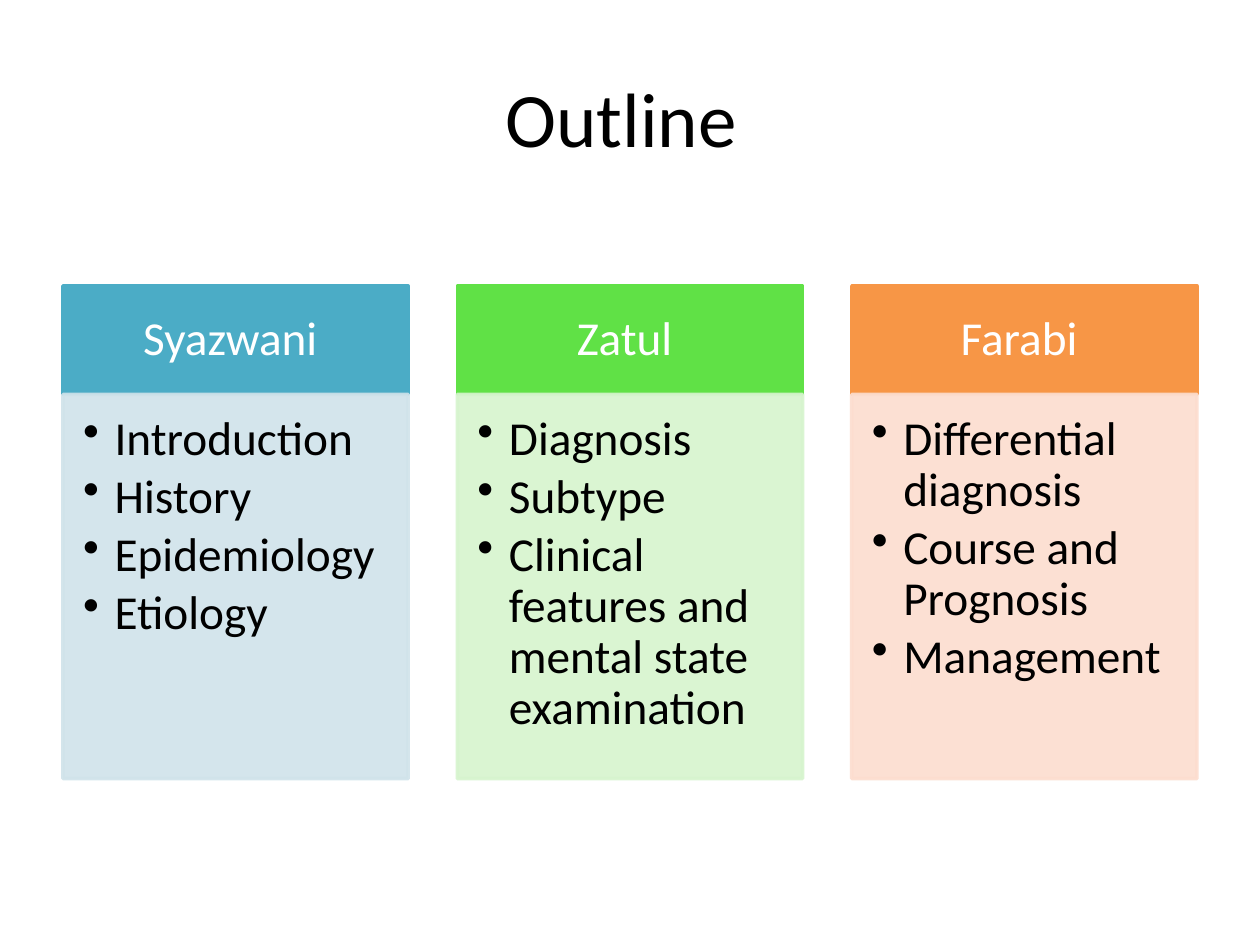
from dataclasses import dataclass

from lxml import etree
from pptx import Presentation
from pptx.dml.color import RGBColor
from pptx.enum.shapes import MSO_SHAPE
from pptx.enum.text import MSO_ANCHOR, PP_ALIGN
from pptx.oxml.ns import qn
from pptx.util import Inches, Pt

RECTANGLE = MSO_SHAPE.RECTANGLE
TOP, MIDDLE = MSO_ANCHOR.TOP, MSO_ANCHOR.MIDDLE
LEFT, CENTER = PP_ALIGN.LEFT, PP_ALIGN.CENTER


@dataclass(frozen=True)
class Theme:
    """Colours, font and sizes of the slide."""
    font: str = "Calibri"
    dark: str = "000000"
    light: str = "FFFFFF"
    title_size: int = 44
    body_size: int = 27
    line_width: int = 2
    panel_opacity: int = 90


THEME = Theme()

SPEAKERS = [
    ("Syazwani ", "4BACC6", "D0E3EA",
     ["Introduction", "History", "Epidemiology", "Etiology"]),
    ("Zatul ", "60E146", "D6F4CE",
     ["Diagnosis", "Subtype", "Clinical features and mental state examination"]),
    ("Farabi ", "F79646", "FCDDCF",
     ["Differential diagnosis", "Course and Prognosis", "Management"]),
]


def set_frame(shape, anchor, insets):
    """Set wrapping, anchor and insets (left, top, right, bottom) and return the frame."""
    frame = shape.text_frame
    frame.word_wrap = True
    frame.vertical_anchor = anchor
    frame.margin_left, frame.margin_top, frame.margin_right, frame.margin_bottom = map(Inches, insets)
    return frame


def add_run(paragraph, text, size, color):
    """Add one styled run to a paragraph."""
    run = paragraph.add_run()
    run.text = text
    run.font.name = THEME.font
    run.font.size = Pt(size)
    run.font.color.rgb = RGBColor.from_string(color)


def set_bullet(paragraph, indent):
    """Give a paragraph a round bullet with a hanging indent."""
    properties = paragraph._p.get_or_add_pPr()
    properties.set("marL", str(Inches(indent)))
    properties.set("indent", str(-Inches(indent)))
    etree.SubElement(properties, qn("a:buChar")).set("char", "•")


def add_box(slide, box, color, opacity=100):
    """Add a rectangle whose fill and line share one colour and opacity."""
    shape = slide.shapes.add_shape(RECTANGLE, *map(Inches, box))
    shape.shadow.inherit = False
    shape.line.width = Pt(THEME.line_width)
    for fill in (shape.fill, shape.line.fill):
        fill.solid()
        fill.fore_color.rgb = RGBColor.from_string(color)
    if opacity < 100:
        for element in shape._element.spPr.iter(qn("a:srgbClr")):
            etree.SubElement(element, qn("a:alpha")).set("val", str(opacity * 1000))
    return shape


def add_title(slide, box, text):
    """Add the centred slide title."""
    frame = set_frame(slide.shapes.add_textbox(*map(Inches, box)), MIDDLE, (0.1, 0.05, 0.1, 0.05))
    paragraph = frame.paragraphs[0]
    paragraph.alignment = CENTER
    add_run(paragraph, text, THEME.title_size, THEME.dark)


def add_header(slide, box, name, color):
    """Add the coloured header with a speaker's name."""
    frame = set_frame(add_box(slide, box, color), MIDDLE, (0.21, 0.12, 0.21, 0.12))
    paragraph = frame.paragraphs[0]
    paragraph.alignment = CENTER
    paragraph.line_spacing = 0.9
    add_run(paragraph, name, THEME.body_size, THEME.light)


def add_topics(slide, box, topics, color):
    """Add the pale panel with a bulleted list of topics."""
    panel = add_box(slide, box, color, THEME.panel_opacity)
    frame = set_frame(panel, TOP, (0.16, 0.16, 0.21, 0.24))
    for index, topic in enumerate(topics):
        paragraph = frame.add_paragraph() if index else frame.paragraphs[0]
        set_bullet(paragraph, 0.25)
        paragraph.level = 1
        paragraph.alignment = LEFT
        paragraph.line_spacing = 0.9
        paragraph.space_after = Pt(4)
        add_run(paragraph, topic, THEME.body_size, THEME.dark)


def add_speakers(slide, box, speakers, gap=0.39, header_height=0.86):
    """Spread one header and topic panel per speaker evenly across the box."""
    left, top, width, height = box
    column_width = (width - gap * (len(speakers) - 1)) / len(speakers)
    for index, (name, strong, pale, topics) in enumerate(speakers):
        x = left + index * (column_width + gap)
        add_header(slide, (x, top, column_width, header_height), name, strong)
        add_topics(slide, (x, top + header_height, column_width, height - header_height), topics, pale)


def main():
    """Build and save the outline slide."""
    presentation = Presentation()
    presentation.slide_width, presentation.slide_height = Inches(10), Inches(7.5)
    slide = presentation.slides.add_slide(presentation.slide_layouts[6])
    add_title(slide, (0.5, 0.3, 9, 1.25), "Outline ")
    add_speakers(slide, (0.5, 2.27, 9, 3.91), SPEAKERS)
    presentation.save("out.pptx")


if __name__ == "__main__":
    main()
